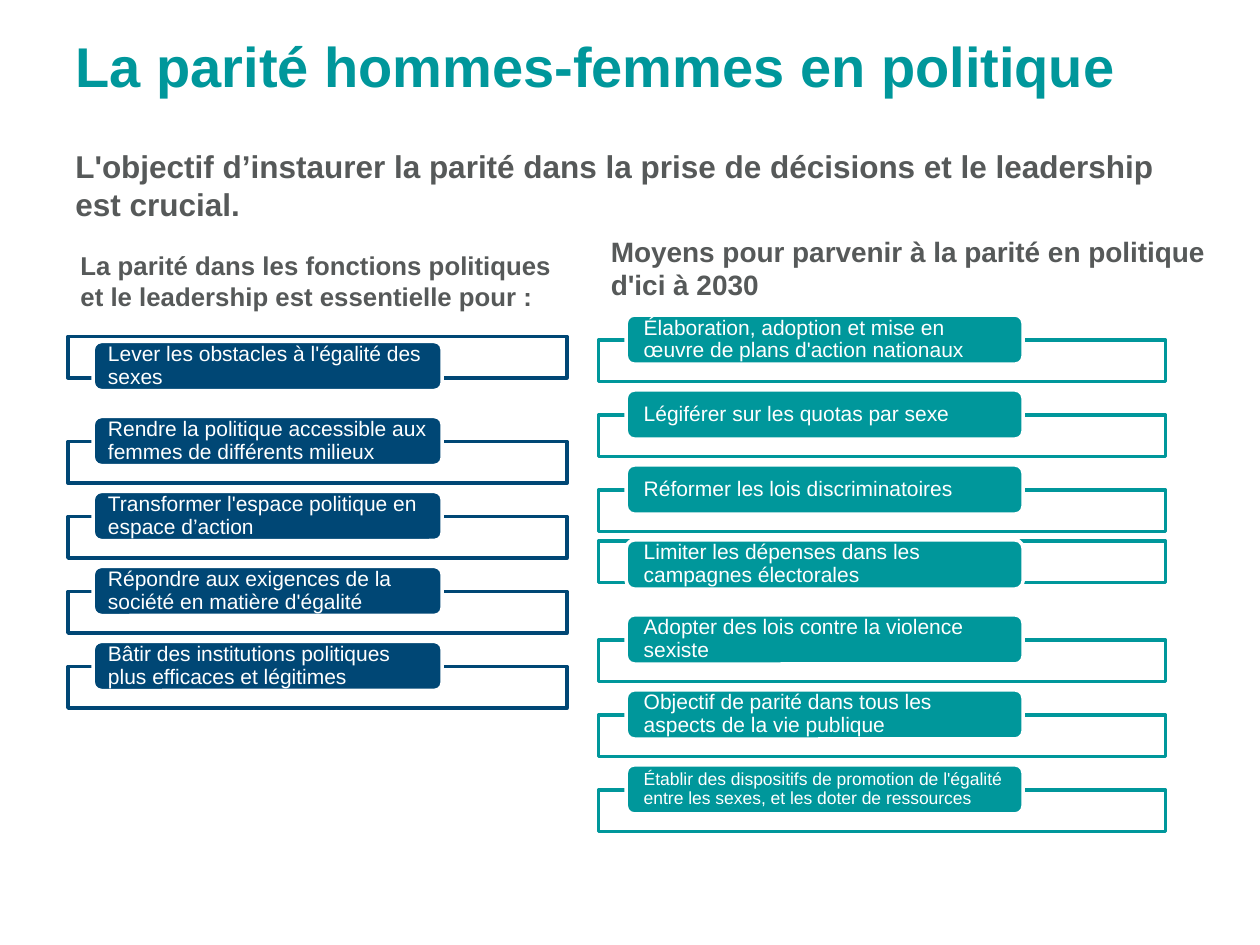
from lxml import etree
from pptx import Presentation
from pptx.dml.color import RGBColor
from pptx.enum import shapes, text
from pptx.oxml import ns
from pptx.util import Inches, Pt

TEAL = RGBColor(0x00, 0x97, 0x9B)
NAVY = RGBColor(0x00, 0x47, 0x75)
GREY = RGBColor(0x56, 0x59, 0x59)
WHITE = RGBColor(0xFF, 0xFF, 0xFF)
FONT = "Arial"

TITLE = "La parité hommes-femmes en politique"
# text, (left, top, width, height), size, top inset, anchor
HEADINGS = [
    ("L'objectif d’instaurer la parité dans la prise de décisions et le leadership est crucial.",
     (0.5, 0.81, 9, 1.31), 18, 0.05, text.MSO_ANCHOR.MIDDLE),
    ("La parité dans les fonctions politiques et le leadership est essentielle pour :",
     (0.54, 1.91, 4.11, 0.53), 14.7, 0.07, text.MSO_ANCHOR.TOP),
    ("Moyens pour parvenir à la parité en politique d'ici à 2030",
     (4.75, 1.81, 5, 0.64), 16, 0.05, text.MSO_ANCHOR.TOP),
]

# frame_shift: frames whose offset from their label differs from FRAME_SHIFT
# small: rows set in smaller type
LISTS = [
    dict(color=NAVY, top=2.71, frame=(0.54, 3.96), label=(0.74, 2.77), inset=0.1,
         frame_shift={0: -0.04}, small=(),
         items=["Lever les obstacles à l'égalité des sexes",
                "Rendre la politique accessible aux femmes de différents milieux",
                "Transformer l'espace politique en espace d’action",
                "Répondre aux exigences de la société en matière d'égalité",
                "Bâtir des institutions politiques plus efficaces et légitimes"]),
    dict(color=TEAL, top=2.5, frame=(4.75, 4.5), label=(4.97, 3.15), inset=0.12,
         frame_shift={3: 0.01}, small=(6,),
         items=["Élaboration, adoption et mise en œuvre de plans d'action nationaux",
                "Légiférer sur les quotas par sexe",
                "Réformer les lois discriminatoires",
                "Limiter les dépenses dans les campagnes électorales",
                "Adopter des lois contre la violence sexiste",
                "Objectif de parité dans tous les aspects de la vie publique",
                "Établir des dispositifs de promotion de l'égalité entre les sexes, "
                "et les doter de ressources"]),
]
PITCH = 0.595
FRAME_SHIFT = 0.2
FRAME_H, LABEL_H = 0.33, 0.39


def write(sp, words, size, color, bold, anchor, side=0.1, top=0.05, bottom=0.05):
    tf = sp.text_frame
    tf.word_wrap = True
    tf.auto_size = text.MSO_AUTO_SIZE.NONE
    tf.vertical_anchor = anchor
    tf.margin_left = tf.margin_right = Inches(side)
    tf.margin_top, tf.margin_bottom = Inches(top), Inches(bottom)
    p = tf.paragraphs[0]
    p.text = words
    p.alignment = text.PP_ALIGN.LEFT
    p.font.name, p.font.size, p.font.bold = FONT, Pt(size), bold
    p.font.color.rgb = color
    return p


def add_box(s, kind, box, fill, line):
    sp = s.shapes.add_shape(kind, *map(Inches, box))
    sp.shadow.inherit = False
    sp.fill.solid()
    sp.fill.fore_color.rgb = fill
    sp.line.color.rgb = line
    sp.line.width = Pt(2)
    return sp


def set_opacity(sp, percent):
    color = sp.fill._xPr.find(ns.qn("a:solidFill"))[0]
    etree.SubElement(color, ns.qn("a:alpha")).set("val", str(percent * 1000))


def add_list(s, spec):
    """Draw one column of labels, each over an open frame."""
    color = spec["color"]
    for i, words in enumerate(spec["items"]):
        y = spec["top"] + i * PITCH
        x, w = spec["frame"]
        shift = spec["frame_shift"].get(i, FRAME_SHIFT)
        frame = add_box(s, shapes.MSO_SHAPE.RECTANGLE, (x, y + shift, w, FRAME_H), WHITE, color)
        set_opacity(frame, 90)
        x, w = spec["label"]
        label = add_box(s, shapes.MSO_SHAPE.ROUNDED_RECTANGLE, (x, y, w, LABEL_H), color, WHITE)
        p = write(label, words, 10 if i in spec["small"] else 12, WHITE, False,
                  text.MSO_ANCHOR.MIDDLE, spec["inset"], 0, 0)
        p.line_spacing = 0.9


def main():
    prs = Presentation()
    prs.slide_width, prs.slide_height = Inches(10), Inches(7.5)
    s = prs.slides.add_slide(prs.slide_layouts[5])

    title = s.shapes.title
    title.left, title.top, title.width, title.height = map(Inches, (0.5, 0.2, 9, 1.45))
    write(title, TITLE, 32, TEAL, True, text.MSO_ANCHOR.TOP)

    for words, box, size, top, anchor in HEADINGS:
        sp = s.shapes.add_textbox(*map(Inches, box))
        write(sp, words, size, GREY, True, anchor, top=top)
    for spec in LISTS:
        add_list(s, spec)
    prs.save("out.pptx")


if __name__ == "__main__":
    main()
